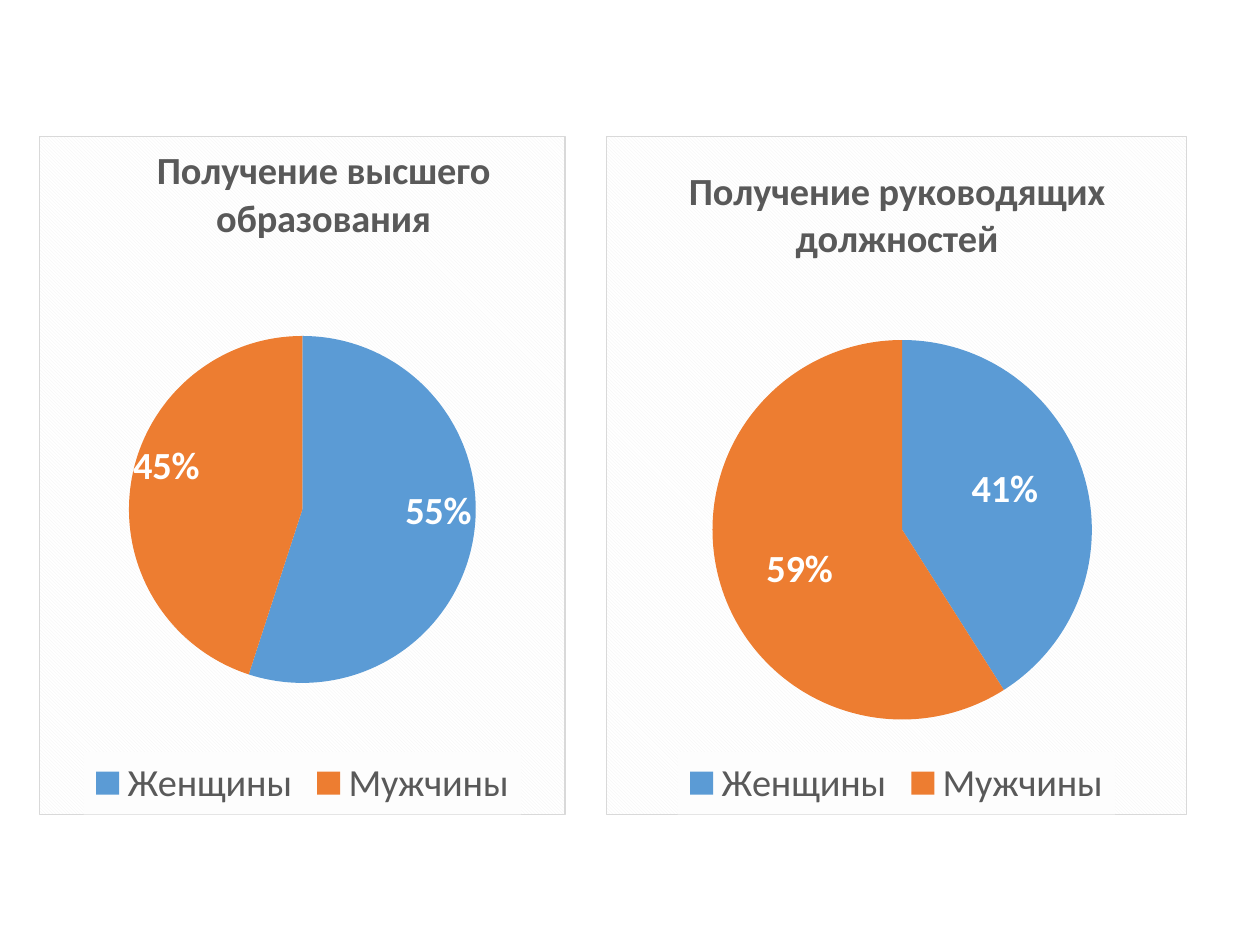
from copy import deepcopy
from dataclasses import dataclass

from lxml import etree
from pptx import Presentation
from pptx import util as u
from pptx.chart.data import CategoryChartData
from pptx.dml.color import RGBColor
from pptx.enum import chart as ch
from pptx.oxml import parse_xml
from pptx.oxml.ns import nsdecls, qn


@dataclass(frozen=True)
class Theme:
    font: str = "Calibri"
    size: float = 22
    base_size: float = 10
    text: str = "595959"
    base_text: str = "000000"
    label: str = "FFFFFF"
    border: str = "D9D9D9"
    pattern: tuple[str, str] = ("F2F2F2", "FFFFFF")
    legend_fill: str = "FDFDFD"
    slices: tuple[str, ...] = ("5B9BD5", "ED7D31")


@dataclass(frozen=True)
class PieCard:
    title: str
    values: tuple[int, ...]
    left: float
    width: float
    title_at: tuple[float, float]
    plot_at: tuple[float, float, float, float]
    label_pos: ch.XL_LABEL_POSITION
    label_shifts: tuple[tuple[float, float], ...]


THEME = Theme()
TOP, HEIGHT = 77.76, 388.08
CATEGORIES = ("Женщины", "Мужчины")
CARDS = (
    PieCard("Получение высшего образования", (55, 45), 22.32, 300.96,
            (0.21, 0), (0.17, 0.29, 0.66, 0.52),
            ch.XL_LABEL_POSITION.INSIDE_END, ((0.01, 0), (-0.01, -0.06))),
    PieCard("Получение руководящих должностей", (41, 59), 346.32, 331.92,
            (0.13, 0.03), (0.18, 0.3, 0.66, 0.56),
            ch.XL_LABEL_POSITION.CENTER, ((0.02, -0.02), (-0.02, 0.02))),
)


def set_font(font, color: str, size: float = THEME.size, bold: bool = False) -> None:
    formats = {"name": THEME.font, "size": u.Pt(size), "bold": bold}
    for name, value in formats.items():
        setattr(font, name, value)
    font.color.rgb = RGBColor.from_string(color)


def set_layout(parent: etree._Element, index: int, values: tuple[float, ...],
               inner: bool = False, mode: str = "edge") -> None:
    """Place a chart part by fractions of the chart's size."""
    for old in parent.findall(qn("c:layout")):
        parent.remove(old)
    target = '<c:layoutTarget val="inner"/>' if inner else ""
    modes = "".join(f'<c:{k}Mode val="{mode}"/>' for k in "xy")
    sizes = "".join(f'<c:{k} val="{v}"/>' for k, v in zip("xywh", values))
    parent.insert(index, parse_xml(
        f'<c:layout {nsdecls("c")}><c:manualLayout>{target}{modes}{sizes}'
        '</c:manualLayout></c:layout>'))


def shift_labels(labels: etree._Element,
                 shifts: tuple[tuple[float, float], ...]) -> None:
    """Move each label from its default place, keeping the shared format."""
    shared = [e for e in labels if e.tag != qn("c:showLeaderLines")]
    for i, shift in enumerate(shifts):
        label = parse_xml(f'<c:dLbl {nsdecls("c")}><c:idx val="{i}"/></c:dLbl>')
        label.extend(deepcopy(shared))
        set_layout(label, 1, shift, mode="factor")
        labels.insert(i, label)


def shape_format(content: str) -> etree._Element:
    return parse_xml(f'<c:spPr {nsdecls("c", "a")}>{content}</c:spPr>')


def color_xml(color: str) -> str:
    return f'<a:srgbClr val="{color}"/>'


def add_pie(s, card: PieCard) -> None:
    data = CategoryChartData()
    data.categories = CATEGORIES
    data.add_series("Series 1", card.values)
    chart = s.shapes.add_chart(
        ch.XL_CHART_TYPE.PIE, u.Pt(card.left), u.Pt(TOP),
        u.Pt(card.width), u.Pt(HEIGHT), data).chart
    set_font(chart.font, THEME.base_text, THEME.base_size)

    # Title
    chart.has_title = True
    tf = chart.chart_title.text_frame
    tf.text = card.title
    set_font(tf.paragraphs[0].runs[0].font, THEME.text, bold=True)
    chart.chart_title.include_in_layout = False
    set_layout(chart.chart_title._element, 1, card.title_at)

    # Slices and percentages
    plot = chart.plots[0]
    plot.vary_by_categories = True
    series = plot.series[0]
    for i, color in enumerate(THEME.slices):
        fill = series.points[i].format.fill
        fill.solid()
        fill.fore_color.rgb = RGBColor.from_string(color)
    labels = series.data_labels
    formats = {"show_percentage": True, "show_value": False,
               "number_format": "0%", "number_format_is_linked": False,
               "position": card.label_pos}
    for name, value in formats.items():
        setattr(labels, name, value)
    set_font(labels.font, THEME.label, bold=True)
    shift_labels(labels._element, card.label_shifts)
    root = chart._chartSpace
    set_layout(root.find(".//" + qn("c:plotArea")), 0, card.plot_at, inner=True)

    # Legend
    chart.has_legend = True
    legend = chart.legend
    legend.position = ch.XL_LEGEND_POSITION.BOTTOM
    legend.include_in_layout = False
    set_font(legend.font, THEME.text)
    legend._element.find(qn("c:txPr")).addprevious(shape_format(
        f"<a:solidFill>{color_xml(THEME.legend_fill)}</a:solidFill>"))

    # Hatched background and border
    fg, bg = map(color_xml, THEME.pattern)
    root.find(qn("c:chart")).addnext(shape_format(
        f'<a:pattFill prst="dkDnDiag"><a:fgClr>{fg}</a:fgClr>'
        f'<a:bgClr>{bg}</a:bgClr></a:pattFill>'
        f'<a:ln w="{u.Pt(0.75)}"><a:solidFill>{color_xml(THEME.border)}'
        '</a:solidFill></a:ln>'))


def main() -> None:
    prs = Presentation()
    prs.slide_width, prs.slide_height = u.Pt(720), u.Pt(540)
    s = prs.slides.add_slide(prs.slide_layouts[6])
    for card in CARDS:
        add_pie(s, card)
    prs.save("out.pptx")


if __name__ == "__main__":
    main()
